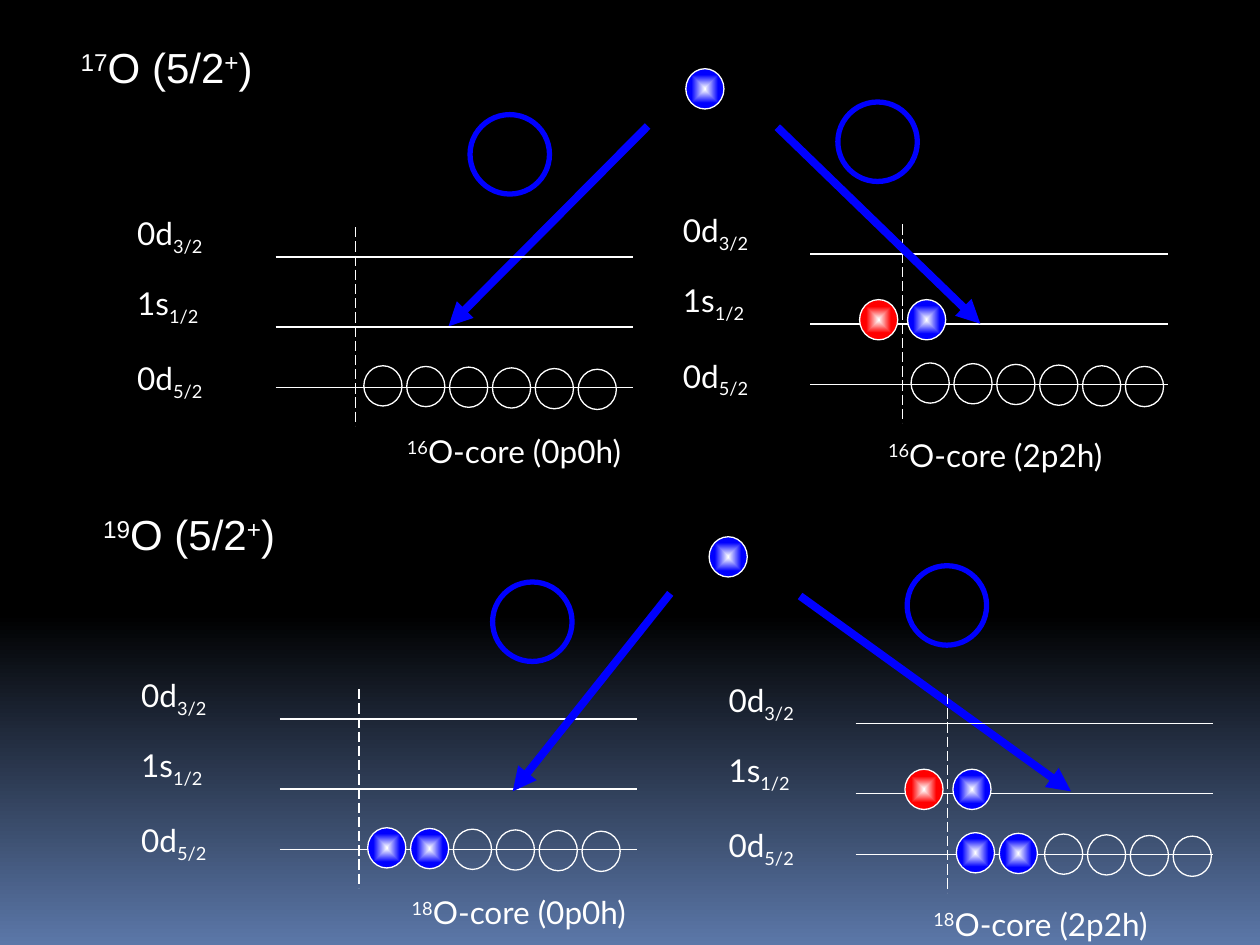
from pptx import Presentation
from pptx.dml.color import RGBColor
from pptx.enum import dml, shapes, text
from pptx.oxml import parse_xml
from pptx.oxml.ns import nsdecls, qn
from pptx.util import Pt

THEME = {
    "ink": "FFFFFF", "blue": "0000FF", "red": "FF0000",
    "sky": [(0, "000000"), (65, "000000"), (100, "5B77A8")],
    "head": ("Arial", 24), "body": ("Lato", 18),
    "thin": 0.75, "ring": 3, "arrow": 4.5,
}

# Content: text pieces are (words, baseline shift in percent)
HEADS = [(38.9, 20.2, "17"), (51.8, 287.3, "19")]
LEVELS = [  # orbital, spin, label offset, line offset from scheme top
    ("0d", "3/2", -11, 17), ("1s", "1/2", 29, 57), ("0d", "5/2", 72, 91.5),
]
# Level schemes: x of labels, lines and axis; top; core mass and state with
# its place; filled slots; extra gap before the open slots; excited pair
BACK = [
    dict(label=383.2, line=463, axis=515.7, top=128.2, mass="16",
         state="2p2h", core=(500.4, 245.5), full=0, gap=0, pair=True),
    dict(label=73.6, line=160, axis=205.2, top=393.8, mass="18",
         state="0p0h", core=(228.2, 506.9), full=2, gap=0, pair=False),
]
FRONT = [
    dict(label=71.3, line=157.5, axis=203, top=129.8, mass="16",
         state="0p0h", core=(225.4, 243.4), full=0, gap=0, pair=False),
    dict(label=409.2, line=489, axis=541.6, top=396.6, mass="18",
         state="2p2h", core=(526.3, 513.4), full=2, gap=1.4, pair=True),
]
ARROWS = [
    (370.1, 72, 256.3, 186.5), (444.2, 72.7, 560.2, 185),
    (383, 339.1, 293, 452.2), (457.2, 340.6, 612, 452.2),
]
RINGS = [(268.6, 65.5), (478.8, 58.3), (281.5, 332.6), (518.4, 323.3)]
LONE = [(391.9, 39.3), (405.2, 306.7)]

# Sizes
SPAN, DROP, STEP, RING = 204.2, 113.5, 24.5, 45.4
BALL = (21.8, 23)

deck = Presentation()
deck.slide_width, deck.slide_height = Pt(720), Pt(540)
slide = deck.slides.add_slide(deck.slide_layouts[5])


def tint(name):
    return RGBColor.from_string(THEME[name])


def grade(owner, stops, way):
    """Swap the owner's solid fill for a gradient."""
    marks = "".join(
        f'<a:gs pos="{pos * 1000}"><a:srgbClr val="{hue}"/></a:gs>'
        for pos, hue in stops)
    new = parse_xml(f'<a:gradFill {nsdecls("a")} rotWithShape="1">'
                    f'<a:gsLst>{marks}</a:gsLst>{way}</a:gradFill>')
    owner.replace(owner.find(qn("a:solidFill")), new)


def write(box, parts, style):
    frame = box.text_frame
    frame.word_wrap = True
    frame.auto_size = text.MSO_AUTO_SIZE.NONE
    frame.vertical_anchor = text.MSO_ANCHOR.TOP
    para = frame.paragraphs[0]
    para.alignment = text.PP_ALIGN.LEFT
    for words, shift in parts:
        run = para.add_run()
        run.text = words
        run.font.name, size = THEME[style]
        run.font.size = Pt(size)
        run.font.color.rgb = tint("ink")
        if shift:
            run.font._element.set("baseline", str(shift * 1000))


def label(x, y, wide, high, parts, style="body"):
    box = slide.shapes.add_textbox(Pt(x), Pt(y), Pt(wide), Pt(high))
    write(box, parts, style)


def rule(x1, y1, x2, y2, hue="ink", width="thin"):
    line = slide.shapes.add_connector(
        shapes.MSO_CONNECTOR.STRAIGHT, Pt(x1), Pt(y1), Pt(x2), Pt(y2))
    line.line.color.rgb = tint(hue)
    line.line.width = Pt(THEME[width])
    line._element.spPr.append(parse_xml(f'<a:effectLst {nsdecls("a")}/>'))
    return line


def disc(x, y, wide, high, hue="ink", width="thin"):
    oval = slide.shapes.add_shape(
        shapes.MSO_SHAPE.OVAL, Pt(x), Pt(y), Pt(wide), Pt(high))
    oval.shadow.inherit = False
    oval.fill.background()
    oval.line.color.rgb = tint(hue)
    oval.line.width = Pt(THEME[width])
    return oval


def ball(x, y, hue=None):
    oval = disc(x, y, *BALL)
    if hue:
        oval.fill.solid()
        stops = [(0, THEME["ink"]), (65 if hue == "red" else 70, THEME[hue])]
        grade(oval._element.spPr, stops,
              '<a:path path="shape"><a:fillToRect l="50000" t="50000" '
              'r="50000" b="50000"/></a:path>')


def scheme(s):
    top, axis = s["top"], s["axis"]
    # Levels and axis
    for orb, spin, high, low in LEVELS:
        label(s["label"], top + high, 63, 36, [(orb, 0), (spin, -25)])
        rule(s["line"], top + low, s["line"] + SPAN, top + low)
    dash = rule(axis, top, axis, top + DROP)
    dash.line.dash_style = dml.MSO_LINE.LONG_DASH
    # Six slots of the lowest level
    for i in range(6):
        full = i < s["full"]
        x = axis + 4.9 + STEP * i + (0 if full else s["gap"])
        ball(x, top + 79.2 + 0.4 * i, "blue" if full else None)
    # Excited pair
    if s["pair"]:
        ball(axis - 24.5, top + 43, "red")
        ball(axis + 2.9, top + 43, "blue")
    label(*s["core"], 149, 29,
          [(s["mass"], 30), (f"O-core ({s['state']})", 0)])


# Background
slide.background.fill.solid()
grade(slide._element.xpath("//p:bgPr")[0], THEME["sky"],
      '<a:lin ang="5400000" scaled="0"/>')

# Headings: the first one is the slide title
for i, (x, y, mass) in enumerate(HEADS):
    parts = [(mass, 30), ("O (5/2", 0), ("+", 30), (")", 0)]
    if i:
        label(x, y, 137, 36, parts, "head")
    else:
        title = slide.shapes.title
        title.left, title.top = Pt(x), Pt(y)
        title.width, title.height = Pt(137), Pt(36)
        write(title, parts, "head")

# Schemes behind the arrows
for s in BACK:
    scheme(s)

# Arrows, rings and lone neutrons
for ends in ARROWS:
    arrow = rule(*ends, "blue", "arrow")
    arrow.line._get_or_add_ln().append(
        parse_xml(f'<a:tailEnd {nsdecls("a")} type="triangle"/>'))
for x, y in RINGS:
    disc(x, y, RING, RING, "blue", "ring")
for x, y in LONE:
    ball(x, y, "blue")

# Schemes in front of the arrows
for s in FRONT:
    scheme(s)

deck.save("out.pptx")
